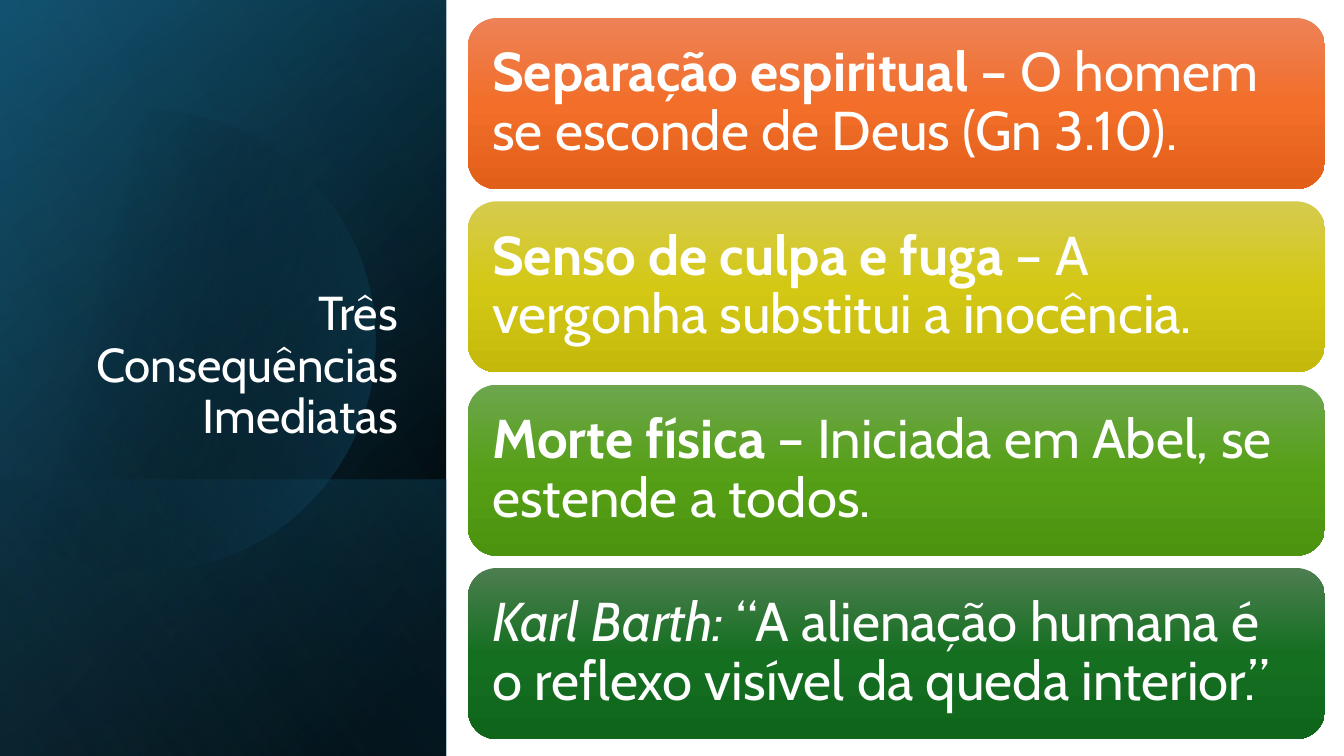
import math
import pptx
import pptx.util
import pptx.dml.color
import pptx.enum.shapes
import pptx.enum.text
import pptx.oxml

HUES = {
    "white": "FFFFFF", "black": "000000", "navy": "104862",
    "teal": "156082", "sky": "46B1E1",
}
FONT = "Cabin"
TITLE = "Três Consequências Imediatas"
# lead words, their style, the rest, colours from top to bottom
CARDS = [
    ("Separação espiritual", "bold", " – O homem se esconde de Deus (Gn 3.10).",
     ("ED8257", "F26E29", "E25F1A")),
    ("Senso de culpa e fuga", "bold", " – A vergonha substitui a inocência.",
     ("D5CB4E", "D4C815", "C4B90B")),
    ("Morte física", "bold", " – Iniciada em Abel, se estende a todos.",
     ("6DA64E", "56A017", "4C930F")),
    ("Karl Barth:", "italic", " “A alienação humana é o reflexo visível da queda interior.”",
     ("4D7E50", "156F21", "0F661B")),
]
# stops are (position %, colour, opacity %)
WIDE, HIGH, SIDE, FOOT = 1344, 756, 446, 276
BASE = (HIGH, 50, [(8, "black", 100), (100, "navy", 100)])
GLOW = (HIGH, 30, [(0, "black", 0), (99, "teal", 46)])
BAND = (FOOT, 130, [(2, "teal", 29), (100, "black", 30)])
VEIL = (HIGH, 120, [(0, "black", 0), (99, "sky", 11)])
DISC = (144, 341, 231)
DISC_FILL = (14, [(29, "black", 0), (100, "teal", 43)])
KIND = pptx.enum.shapes.MSO_SHAPE


def px(n):
    return pptx.util.Emu(round(n * 914400 / 100.8))


def shade(shape, angle, stops):
    """Give the shape a linear gradient, no line and no shadow."""
    shape.shadow.inherit = False
    shape.line.fill.background()
    shape.fill.background()
    marks = "".join(
        f'<a:gs pos="{pos * 1000}"><a:srgbClr val="{HUES.get(hue, hue)}">'
        f'<a:alpha val="{alpha * 1000}"/></a:srgbClr></a:gs>'
        for pos, hue, alpha in stops)
    grad = pptx.oxml.parse_xml(
        '<a:gradFill xmlns:a="http://schemas.openxmlformats.org/drawingml/2006/main"'
        f' rotWithShape="1"><a:gsLst>{marks}</a:gsLst>'
        f'<a:lin ang="{angle * 60000}" scaled="0"/></a:gradFill>')
    props = shape.element.spPr
    old = props.find(pptx.oxml.ns.qn("a:noFill"))
    props.replace(old, grad)


def panel(tall, angle, stops):
    """Draw a side panel, turned and flipped, resting on the slide's foot."""
    left, top = (SIDE - tall) / 2, HIGH - (tall + SIDE) / 2
    box = slide.shapes.add_shape(KIND.RECTANGLE, px(left), px(top), px(tall), px(SIDE))
    box.rotation = 90
    box.element.spPr.xfrm.set("flipH", "1")
    shade(box, angle, stops)


def disc():
    """Draw the circle, cut off at the slide's left edge."""
    mid, down, rad = DISC
    end = math.acos(-mid / rad)
    turns = [end * (i / 60 - 1) for i in range(121)]
    dots = [(px(mid + rad * math.cos(t)), px(down + rad * math.sin(t))) for t in turns]
    pen = slide.shapes.build_freeform(*dots[0])
    pen.add_line_segments(dots[1:], close=True)
    shade(pen.convert_to_shape(), *DISC_FILL)


def style(para, size, align):
    para.alignment = align
    para.line_spacing = 0.9
    for run in para.runs:
        run.font.name = FONT
        run.font.size = pptx.util.Pt(size)
        run.font.color.rgb = pptx.dml.color.RGBColor.from_string(HUES["white"])


def card(row, lead, look, rest, hues):
    top = 18 + row * 550 / 3
    box = slide.shapes.add_shape(KIND.ROUNDED_RECTANGLE, px(468), px(top), px(857), px(171))
    shade(box, 90, [(50 * i, hue, 100) for i, hue in enumerate(hues)])
    frame = box.text_frame
    frame.word_wrap = True
    frame.vertical_anchor = pptx.enum.text.MSO_ANCHOR.MIDDLE
    frame.margin_left = frame.margin_right = px(16)
    frame.margin_top = frame.margin_bottom = px(16)
    para = frame.paragraphs[0]
    for text in (lead, rest):
        para.add_run().text = text
    style(para, 39, pptx.enum.text.PP_ALIGN.LEFT)
    setattr(para.runs[0].font, look, True)


deck = pptx.Presentation()
deck.slide_width, deck.slide_height = px(WIDE), px(HIGH)
slide = deck.slides.add_slide(deck.slide_layouts[5])

for part in (BASE, GLOW, BAND):
    panel(*part)
disc()
panel(*VEIL)

title = slide.shapes.title
title.element.getparent().append(title.element)
title.left, title.top, title.width, title.height = px(64), px(185), px(344), px(264)
frame = title.text_frame
frame.text = TITLE
frame.word_wrap = True
frame.auto_size = pptx.enum.text.MSO_AUTO_SIZE.NONE
frame.vertical_anchor = pptx.enum.text.MSO_ANCHOR.BOTTOM
style(frame.paragraphs[0], 34, pptx.enum.text.PP_ALIGN.RIGHT)

for row, item in enumerate(CARDS):
    card(row, *item)

deck.save("out.pptx")
